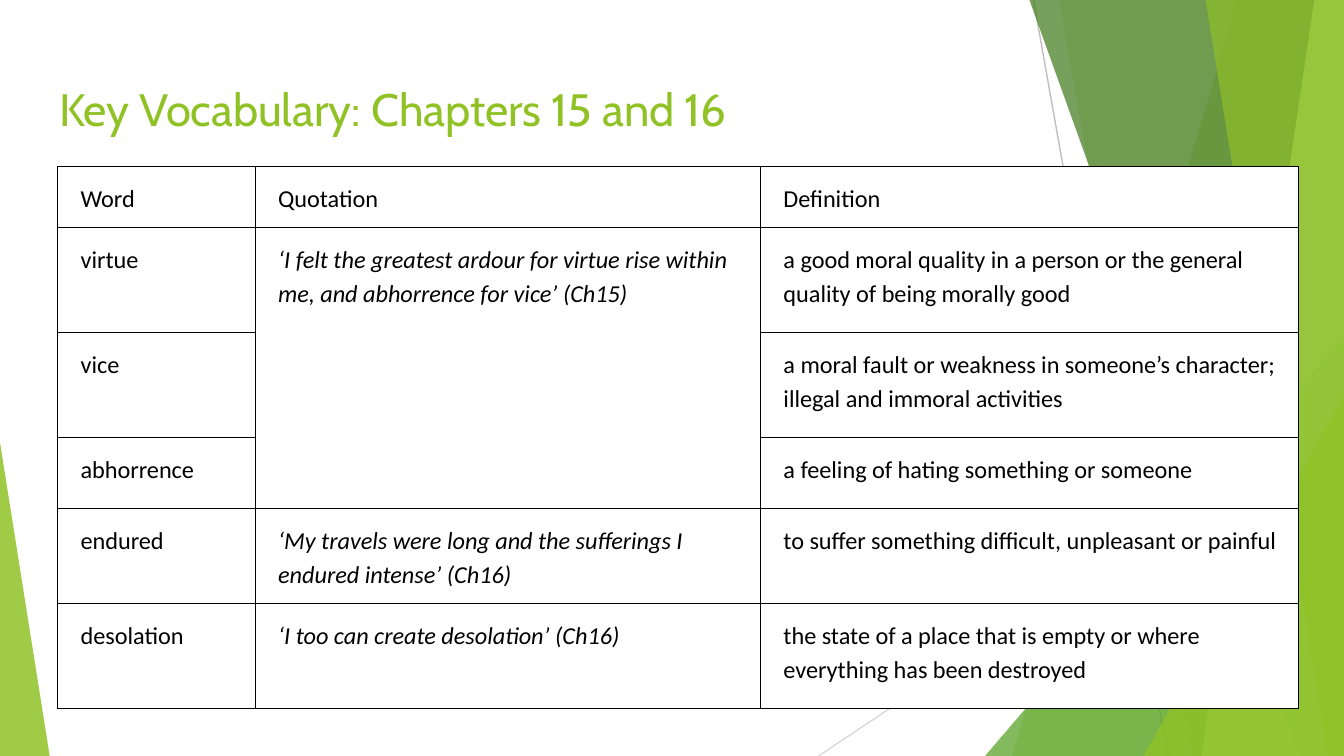
"""Build a vocabulary table slide with a faceted green border."""
import pptx
import pptx.dml.color
import pptx.enum.shapes
import pptx.enum.text
import pptx.oxml
import pptx.oxml.ns
import pptx.util

Inches = pptx.util.Inches
Pt = pptx.util.Pt
RGBColor = pptx.dml.color.RGBColor
SHAPES = pptx.enum.shapes.MSO_SHAPE

WIDTH, HEIGHT = 10, 5.625
GREEN = RGBColor(0x90, 0xC2, 0x26)
MID_GREEN = RGBColor(0x54, 0xA0, 0x21)
DARK_GREEN = RGBColor(0x3F, 0x78, 0x19)
PALE_GREEN = RGBColor(0xC0, 0xE4, 0x74)
GREY = RGBColor(0xBF, 0xBF, 0xBF)
PALE_GREY = RGBColor(0xD9, 0xD9, 0xD9)
BLACK = RGBColor(0, 0, 0)
WHITE = RGBColor(0xFF, 0xFF, 0xFF)

TITLE = "Key Vocabulary: Chapters 15 and 16"
ROWS = [
    ("Word", "Quotation", "Definition"),
    ("virtue", "‘I felt the greatest ardour for virtue rise within me, and abhorrence for vice’ (Ch15)",
     "a good moral quality in a person or the general quality of being morally good"),
    ("vice", "", "a moral fault or weakness in someone’s character; illegal and immoral activities"),
    ("abhorrence", "", "a feeling of hating something or someone"),
    ("endured", "‘My travels were long and the sufferings I endured intense’ (Ch16)",
     "to suffer something difficult, unpleasant or painful"),
    ("desolation", "‘I too can create desolation’ (Ch16)",
     "the state of a place that is empty or where everything has been destroyed"),
]
COLUMN_WIDTHS = [1.47, 3.76, 4]
ROW_HEIGHTS = [0.39, 0.78, 0.78, 0.53, 0.62, 0.78]
QUOTATION = 1
SHARED_QUOTATION_ROWS = (1, 3)

LINES = [((7.69, 0), (8.69, HEIGHT), GREY), ((WIDTH, 3.02), (6.09, HEIGHT), PALE_GREY)]
# Bands hold top and bottom left edges; peaks hold left, top, width and apex.
FACETS = [
    ("band", (9.21, 7.53), GREEN, 30),
    ("band", (7.88, 8.87), GREEN, 20),
    ("peak", (7.33, 2.5, 2.67, 1), MID_GREEN, 72),
    ("band", (7.66, 9.68), DARK_GREEN, 70),
    ("band", (9.78, 8.94), PALE_GREEN, 70),
    ("band", (8.97, 9.88), GREEN, 65),
    ("peak", (8.51, 2.94, 1.49, 1), GREEN, 80),
    ("peak", (0, 3.29, 0.37, 0), GREEN, 85),
]


def add_child(parent, tag, **attributes):
    child = pptx.oxml.parse_xml(f"<a:{tag} {pptx.oxml.ns.nsdecls('a')}/>")
    for name, value in attributes.items():
        child.set(name, str(value))
    parent.append(child)
    return child


def add_line(slide, start, end, color):
    line = slide.shapes.add_connector(
        pptx.enum.shapes.MSO_CONNECTOR.STRAIGHT, *map(Inches, start + end))
    line.line.color.rgb = color
    line.line.width = Pt(0.75)
    add_child(line.element.spPr, "effectLst")


def add_facet(slide, kind, geometry, color, opacity):
    if kind == "band":
        top_left, bottom_left = geometry
        corners = [(WIDTH, 0), (WIDTH, HEIGHT), (bottom_left, HEIGHT)]
        builder = slide.shapes.build_freeform(Inches(top_left), 0)
        builder.add_line_segments([tuple(map(Inches, corner)) for corner in corners])
        facet = builder.convert_to_shape()
    else:
        left, top, width, apex = geometry
        facet = slide.shapes.add_shape(
            SHAPES.ISOSCELES_TRIANGLE, *map(Inches, (left, top, width, HEIGHT - top)))
        facet.adjustments[0] = apex
    facet.shadow.inherit = False
    facet.line.fill.background()
    facet.fill.solid()
    facet.fill.fore_color.rgb = color
    solid = facet.element.spPr.find(pptx.oxml.ns.qn("a:solidFill"))
    add_child(solid[0], "alpha", val=opacity * 1000)


def add_run(paragraph, text, font, size, color, italic=False):
    run = paragraph.add_run()
    run.text = text
    run.font.name = font
    run.font.size = Pt(size)
    run.font.color.rgb = color
    run.font.italic = italic


def set_insets(frame):
    frame.margin_left = frame.margin_right = Inches(0.1)
    frame.margin_top = frame.margin_bottom = Inches(0.1)


def add_title(slide):
    title = slide.shapes.title
    title.left, title.top, title.width, title.height = map(Inches, (0.34, 0.49, 9.32, 0.63))
    frame = title.text_frame
    set_insets(frame)
    frame.word_wrap = True
    frame.auto_size = pptx.enum.text.MSO_AUTO_SIZE.NONE
    frame.vertical_anchor = pptx.enum.text.MSO_ANCHOR.MIDDLE
    paragraph = frame.paragraphs[0]
    paragraph.alignment = pptx.enum.text.PP_ALIGN.LEFT
    add_run(paragraph, TITLE, "Cabin", 24.3, GREEN)
    title.element.getparent().append(title.element)


def format_cell(cell, text, italic):
    set_insets(cell)
    properties = cell._tc.get_or_add_tcPr()
    for side in "LRTB":
        border = add_child(properties, f"ln{side}", w=Pt(0.75))
        add_child(add_child(border, "solidFill"), "srgbClr", val=BLACK)
    cell.fill.solid()
    cell.fill.fore_color.rgb = WHITE
    paragraph = cell.text_frame.paragraphs[0]
    paragraph._p.get_or_add_pPr().set("marL", str(Inches(0.07)))
    paragraph.line_spacing = 1.15
    if text:
        add_run(paragraph, text, "Calibri", 13, BLACK, italic)


def add_vocabulary(slide):
    frame = slide.shapes.add_table(
        len(ROWS), len(COLUMN_WIDTHS), Inches(0.43), Inches(1.24),
        Inches(sum(COLUMN_WIDTHS)), Inches(sum(ROW_HEIGHTS)))
    table = frame.table
    table.first_row = table.horz_banding = False
    for column, width in zip(table.columns, COLUMN_WIDTHS):
        column.width = Inches(width)
    for row, height in zip(table.rows, ROW_HEIGHTS):
        row.height = Inches(height)
    first, last = SHARED_QUOTATION_ROWS
    table.cell(first, QUOTATION).merge(table.cell(last, QUOTATION))
    for row_index, texts in enumerate(ROWS):
        for column_index, text in enumerate(texts):
            italic = row_index > 0 and column_index == QUOTATION
            format_cell(table.cell(row_index, column_index), text, italic)


def main():
    presentation = pptx.Presentation()
    presentation.slide_width = Inches(WIDTH)
    presentation.slide_height = Inches(HEIGHT)
    slide = presentation.slides.add_slide(presentation.slide_layouts[5])
    for line in LINES:
        add_line(slide, *line)
    for facet in FACETS:
        add_facet(slide, *facet)
    add_title(slide)
    add_vocabulary(slide)
    presentation.save("out.pptx")


if __name__ == "__main__":
    main()
